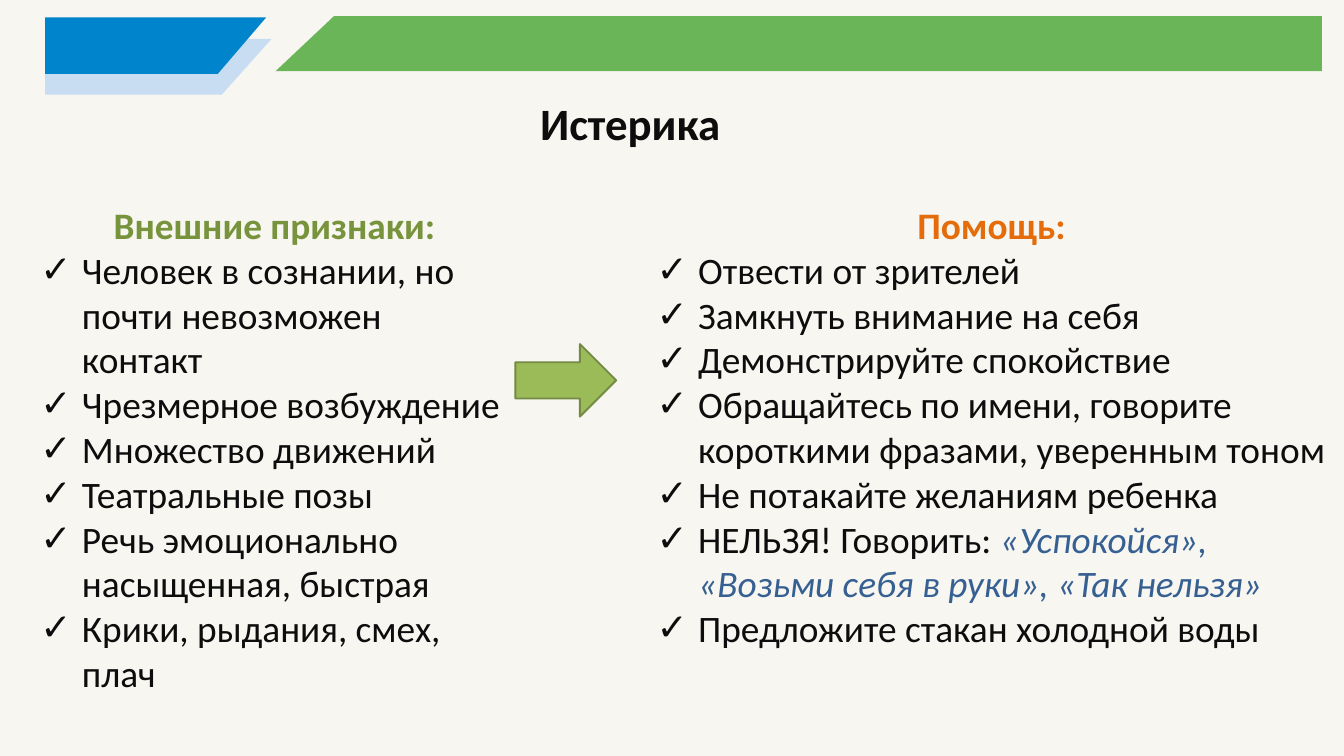
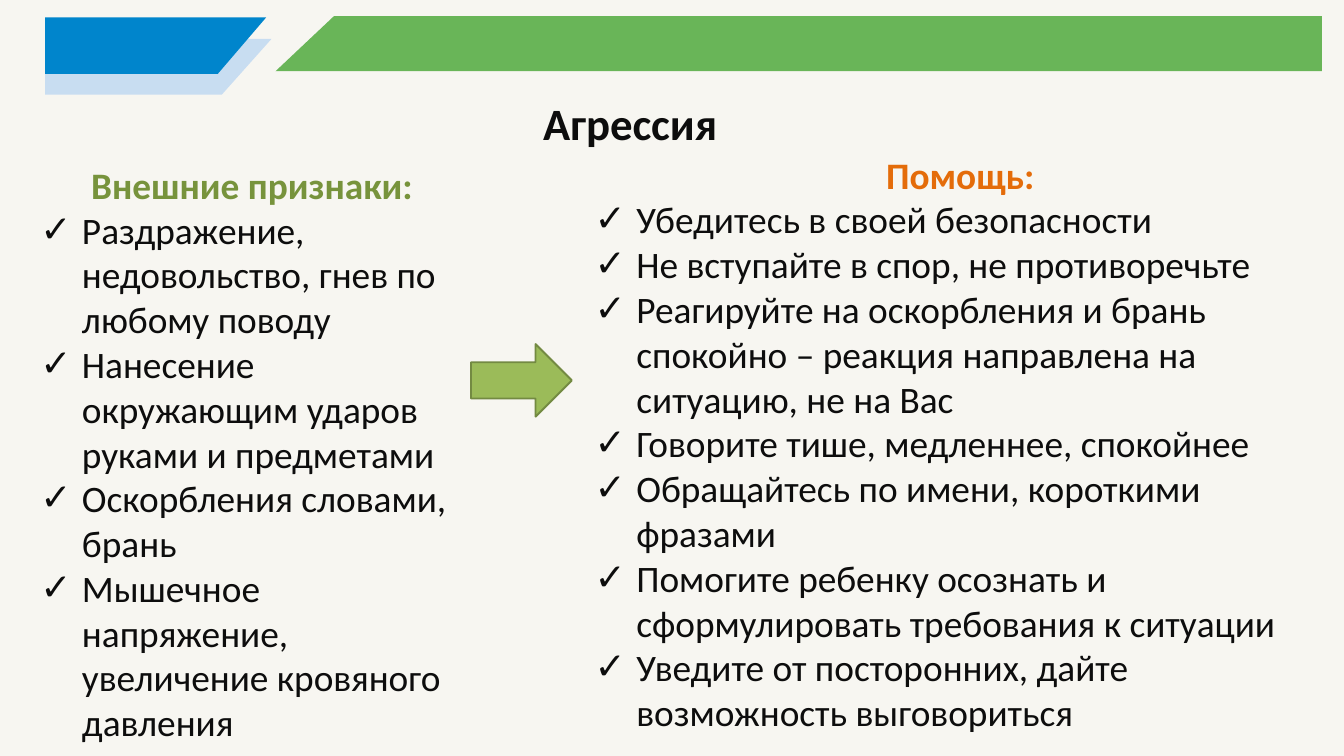
from lxml import etree
from pptx import Presentation
from pptx.dml.color import RGBColor
from pptx.enum.shapes import MSO_SHAPE
from pptx.enum.text import MSO_ANCHOR, MSO_AUTO_SIZE, PP_ALIGN
from pptx.oxml.ns import qn
from pptx.util import Inches, Pt

RIGHT_ARROW = MSO_SHAPE.RIGHT_ARROW
CENTER, LEFT = PP_ALIGN.CENTER, PP_ALIGN.LEFT
BOTTOM, TOP = MSO_ANCHOR.BOTTOM, MSO_ANCHOR.TOP
NO_FIT, GROW = MSO_AUTO_SIZE.NONE, MSO_AUTO_SIZE.SHAPE_TO_FIT_TEXT
TWO_CONTENT = 3

FONT = "Calibri"
COLORS = {
    "background": "F7F6F1",
    "band_shadow": "C8DDF1",
    "band_blue": "0085CC",
    "band_green": "69B558",
    "text": "0D0D0D",
    "signs": "77933C",
    "help": "E46C0A",
    "quote": "376092",
    "arrow": "9BBB59",
    "arrow_line": "738A42",
}
BANDS = [
    ("band_shadow", [(4.04, 0.58), (0.67, 0.58), (0.67, 1.41), (3.3, 1.41)]),
    ("band_blue", [(3.96, 0.26), (0.67, 0.26), (0.67, 1.1), (3.24, 1.1)]),
    ("band_green", [(19.67, 0.24), (4.97, 0.24), (4.1, 1.06), (19.67, 1.06)]),
]
SLIDES = [
    {
        "title": "Истерика ",
        "signs_box": (0.5, 2.96, 7.17, 8.48),
        "signs": [
            "Человек в сознании, но почти невозможен контакт",
            "Чрезмерное возбуждение",
            "Множество движений",
            "Театральные позы",
            "Речь эмоционально насыщенная, быстрая",
            "Крики, рыдания, смех, плач",
        ],
        "help_box": (9.67, 2.96, 10.17, 6.83),
        "help": [
            "Отвести от зрителей",
            "Замкнуть внимание на себя",
            "Демонстрируйте спокойствие",
            "Обращайтесь по имени, говорите короткими фразами, уверенным тоном",
            "Не потакайте желаниям ребенка",
            ("НЕЛЬЗЯ! Говорить: ", "«Успокойся», «Возьми себя в руки», «Так нельзя»"),
            "Предложите стакан холодной воды",
        ],
        "arrow_left": 7.67,
    },
    {
        "title": "Агрессия ",
        "signs_box": (0.5, 2.36, 6.5, 9.83),
        "signs": [
            "Раздражение, недовольство, гнев по любому поводу",
            "Нанесение окружающим ударов руками и предметами",
            "Оскорбления словами, брань",
            "Мышечное напряжение, увеличение кровяного давления",
        ],
        "help_box": (8.75, 2.21, 11.08, 10.53),
        "help": [
            "Убедитесь в своей безопасности",
            "Не вступайте в спор, не противоречьте",
            "Реагируйте на оскорбления и брань спокойно – реакция направлена на ситуацию, не на Вас",
            "Говорите тише, медленнее, спокойнее",
            "Обращайтесь по имени, короткими фразами",
            "Помогите ребенку осознать и сформулировать требования к ситуации",
            "Уведите от посторонних, дайте возможность выговориться",
        ],
        "arrow_left": 7.01,
    },
]


def rgb(name):
    return RGBColor.from_string(COLORS[name])


def add_text(paragraph, text, size=40, color="text", bold=False, italic=False):
    run = paragraph.add_run()
    run.text = text
    font = run.font
    font.name, font.size = FONT, Pt(size)
    font.bold, font.italic = bold, italic
    font.color.rgb = rgb(color)


def set_bullet(paragraph, character=None, indent=0.0):
    properties = paragraph._p.get_or_add_pPr()
    properties.set("marL", str(Inches(indent)))
    properties.set("indent", str(-Inches(indent)))
    if character:
        etree.SubElement(properties, qn("a:buChar")).set("char", character)
    else:
        etree.SubElement(properties, qn("a:buNone"))


class Deck:
    def __init__(self):
        self.presentation = Presentation()
        self.presentation.slide_width = Inches(20)
        self.presentation.slide_height = Inches(11.25)
        fill = self.presentation.slide_master.background.fill
        fill.solid()
        fill.fore_color.rgb = rgb("background")
        self.slide = None

    def add_slide(self):
        layout = self.presentation.slide_layouts[TWO_CONTENT]
        self.slide = self.presentation.slides.add_slide(layout)
        self.add_bands()

    def add_bands(self):
        group = self.slide.shapes.add_group_shape()
        for color, corners in BANDS:
            points = [(Inches(x), Inches(y)) for x, y in corners]
            builder = group.shapes.build_freeform(*points[0])
            builder.add_line_segments(points[1:], close=True)
            band = builder.convert_to_shape()
            self.paint(band, color)
            band.line.fill.background()

    def paint(self, shape, color):
        shape.shadow.inherit = False
        shape.fill.solid()
        shape.fill.fore_color.rgb = rgb(color)

    def place(self, index, box, anchor, fit):
        shape = self.slide.placeholders[index]
        shape.left, shape.top, shape.width, shape.height = map(Inches, box)
        frame = shape.text_frame
        frame.word_wrap = True
        frame.vertical_anchor = anchor
        frame.auto_size = fit
        return frame

    def add_title(self, text):
        frame = self.place(0, (3.93, 1.39, 11.05, 0.97), BOTTOM, NO_FIT)
        frame.margin_left = frame.margin_right = Inches(0.13)
        frame.margin_top = frame.margin_bottom = Inches(0.13)
        paragraph = frame.paragraphs[0]
        paragraph.alignment = CENTER
        paragraph.line_spacing = 0.9
        add_text(paragraph, text, size=48, bold=True)

    def add_list(self, index, box, heading, color, items):
        frame = self.place(index, box, TOP, GROW)
        paragraph = frame.paragraphs[0]
        paragraph.alignment = CENTER
        paragraph.space_before = Pt(0)
        set_bullet(paragraph)
        add_text(paragraph, heading, color=color, bold=True)
        for item in items:
            paragraph = frame.add_paragraph()
            paragraph.alignment = LEFT
            paragraph.space_before = Pt(0)
            set_bullet(paragraph, "✓", 0.62)
            if isinstance(item, tuple):
                lead, quote = item
                add_text(paragraph, lead)
                add_text(paragraph, quote, color="quote", italic=True)
            else:
                add_text(paragraph, item)

    def add_arrow(self, left):
        arrow = self.slide.shapes.add_shape(
            RIGHT_ARROW, Inches(left), Inches(5.12), Inches(1.5), Inches(1.08)
        )
        self.paint(arrow, "arrow")
        arrow.line.color.rgb = rgb("arrow_line")
        arrow.line.width = Pt(2)


def main():
    deck = Deck()
    for content in SLIDES:
        deck.add_slide()
        deck.add_title(content["title"])
        deck.add_list(1, content["signs_box"], "Внешние признаки:", "signs", content["signs"])
        deck.add_list(2, content["help_box"], "Помощь:", "help", content["help"])
        deck.add_arrow(content["arrow_left"])
    deck.presentation.save("out.pptx")


if __name__ == "__main__":
    main()
